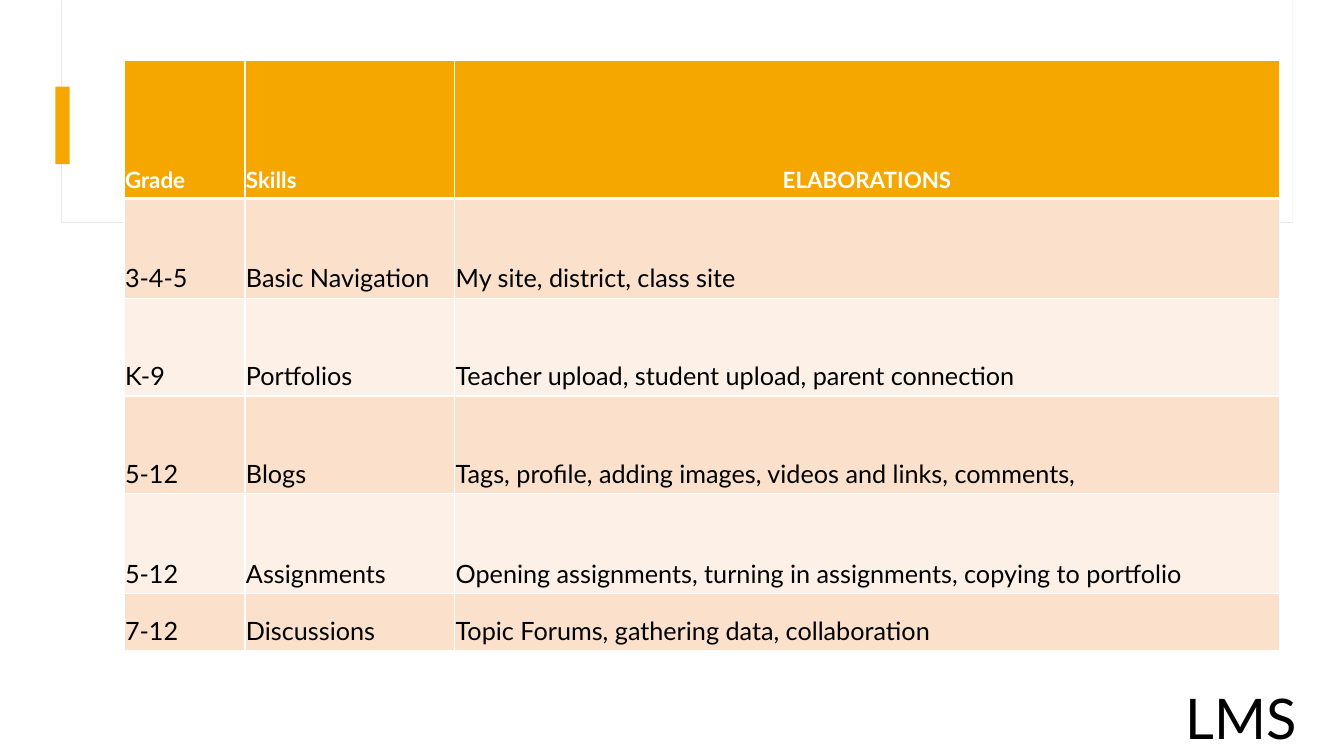
from lxml.etree import SubElement
from pptx import Presentation
from pptx.dml.color import RGBColor
from pptx.enum.shapes import MSO_SHAPE
from pptx.enum.text import MSO_ANCHOR, PP_ALIGN
from pptx.oxml.ns import qn
from pptx.util import Inches, Pt

FONT = "Lato"
WHITE, BLACK, ORANGE = "FFFFFF", "000000", "F5A700"
FRAME_LINE, FRAME_SHADOW = "E9E9E9", "D9D9D9"
BANDS = ("FBE1CC", "FDF1E7")
SLIDE_SIZE = (13.33, 7.5)
FRAME = (0.61, 0, 12.21, 2.21)
PANEL = (0.62, 0, 12.2, 2.2)
ACCENT = (0.55, 0.86, 0.14, 0.77)
TITLE = (8.48, 6.73, 4.48, 0.77)
TABLE_CORNER = (1.23, 0.6)
COLUMNS = (1.2, 2.08, 8.18)
ROWS = (1.37, 0.99, 0.97, 0.97, 0.99, 0.57)
SKILLS = [
    ("Grade", "Skills", "ELABORATIONS"),
    ("3-4-5", "Basic Navigation", "My site, district, class site"),
    ("K-9", "Portfolios", "Teacher upload, student upload, parent connection"),
    ("5-12", "Blogs", "Tags, profile, adding images, videos and links, comments,"),
    ("5-12", "Assignments",
     "Opening assignments, turning in assignments, copying to portfolio"),
    ("7-12", "Discussions", "Topic Forums, gathering data, collaboration"),
]


def color(value):
    return RGBColor.from_string(value)


def inches(lengths):
    return [Inches(length) for length in lengths]


def add_solid(parent, value):
    fill = SubElement(parent, qn("a:solidFill"))
    return SubElement(fill, qn("a:srgbClr"), val=value)


def add_rectangle(page, place, fill, line=None):
    box = page.shapes.add_shape(MSO_SHAPE.RECTANGLE, *inches(place))
    box.shadow.inherit = False
    box.fill.solid()
    box.fill.fore_color.rgb = color(fill)
    if line:
        box.line.color.rgb = color(line)
        box.line.width = Pt(0.75)
    else:
        box.line.fill.background()
    return box


def add_shadow(box):
    effects = box.element.spPr.find(qn("a:effectLst"))
    shadow = SubElement(effects, qn("a:outerShdw"), blurRad=str(Pt(4)),
                        dist=str(Pt(3)), dir=str(45 * 60000), rotWithShape="0")
    SubElement(add_solid(shadow, FRAME_SHADOW), qn("a:alpha"), val="30000")


def write(para, text, size, value, bold=False, align=PP_ALIGN.LEFT):
    para.alignment = align
    span = para.add_run()
    span.text = text
    span.font.name = FONT
    span.font.size = Pt(size)
    span.font.bold = bold
    span.font.color.rgb = color(value)


def style_cell(cell, fill, is_header):
    cell.vertical_anchor = MSO_ANCHOR.BOTTOM
    cell.margin_left = cell.margin_right = cell.margin_top = Inches(0.01)
    cell.margin_bottom = Inches(0.05)
    properties = cell._tc.get_or_add_tcPr()
    for side in ("L", "R", "T", "B"):
        width = 3 if is_header and side == "B" else 1
        border = SubElement(properties, qn(f"a:ln{side}"), w=str(Pt(width)))
        add_solid(border, WHITE)
    cell.fill.solid()
    cell.fill.fore_color.rgb = color(fill)


def add_skills_table(page):
    place = inches((*TABLE_CORNER, sum(COLUMNS), sum(ROWS)))
    table = page.shapes.add_table(len(ROWS), len(COLUMNS), *place).table
    for column, width in zip(table.columns, COLUMNS):
        column.width = Inches(width)
    for row, height in zip(table.rows, ROWS):
        row.height = Inches(height)
    for r, texts in enumerate(SKILLS):
        is_header = r == 0
        for c, text in enumerate(texts):
            cell = table.cell(r, c)
            style_cell(cell, ORANGE if is_header else BANDS[(r - 1) % 2], is_header)
            centred = is_header and c == len(COLUMNS) - 1
            write(cell.text_frame.paragraphs[0], text, 16 if is_header else 18,
                  WHITE if is_header else BLACK, is_header,
                  PP_ALIGN.CENTER if centred else PP_ALIGN.LEFT)


def main():
    """Build the LMS skills slide."""
    deck = Presentation()
    deck.slide_width, deck.slide_height = inches(SLIDE_SIZE)
    page = deck.slides.add_slide(deck.slide_layouts[6])
    add_shadow(add_rectangle(page, FRAME, WHITE, FRAME_LINE))
    add_rectangle(page, PANEL, WHITE)
    add_rectangle(page, ACCENT, ORANGE)
    add_skills_table(page)
    title = page.shapes.add_textbox(*inches(TITLE)).text_frame
    title.word_wrap = True
    write(title.paragraphs[0], "LMS", 40, BLACK, align=PP_ALIGN.RIGHT)
    deck.save("out.pptx")


if __name__ == "__main__":
    main()
